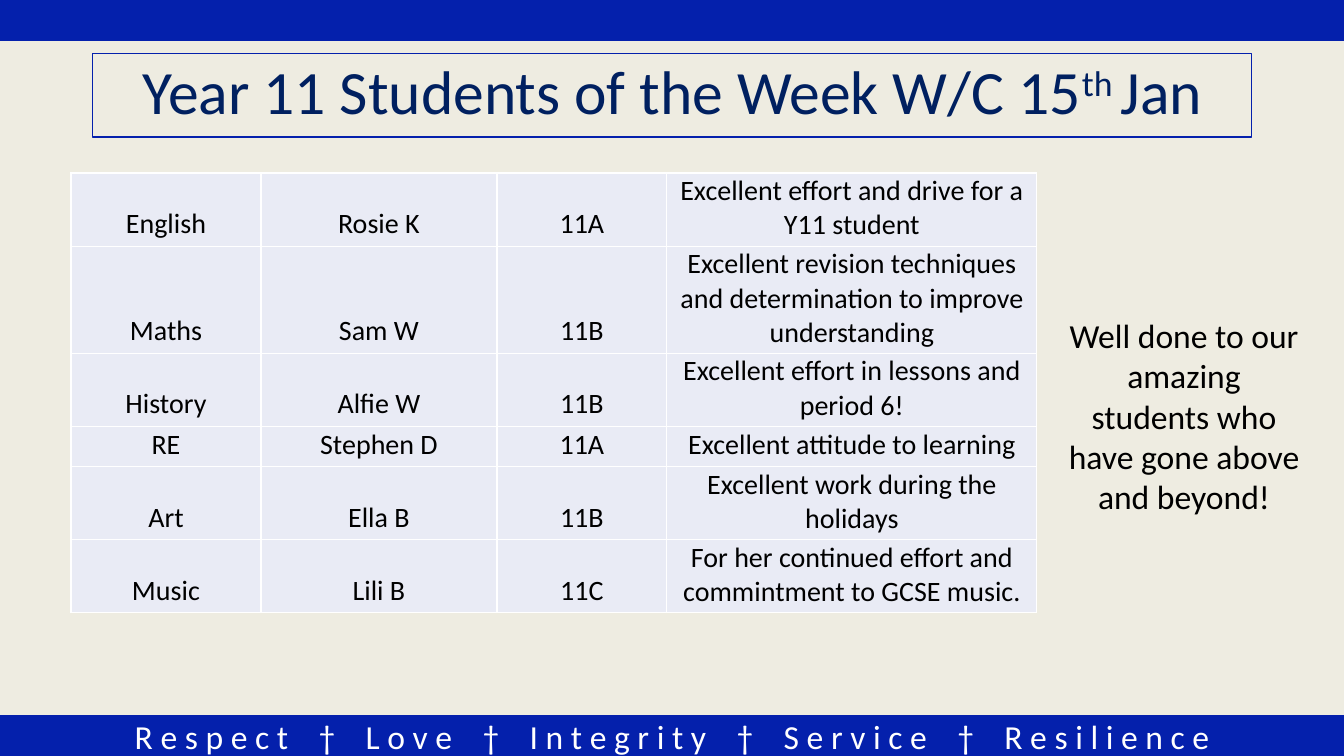
from pptx import Presentation
from pptx.dml.color import RGBColor
from pptx.enum.shapes import MSO_SHAPE as Shape
from pptx.enum.text import MSO_ANCHOR as Anchor, MSO_AUTO_SIZE as Fit, PP_ALIGN as Align
from pptx.oxml import parse_xml
from pptx.oxml.ns import nsdecls
from pptx.util import Emu, Pt

VALUES = ["Respect", "Love", "Integrity", "Service", "Resilience"]
TITLE = [("Year 11 Students of the Week W/C 15", 0), ("th ", 30000), ("Jan", 0)]
PRAISE = "Well done to our amazing students who have gone above and beyond!"
STUDENTS = [
    ("English", "Rosie K", "11A", "Excellent effort and drive for a Y11 student"),
    ("Maths", "Sam W", "11B",
     "Excellent revision techniques and determination to improve understanding"),
    ("History", "Alfie W", "11B", "Excellent effort in lessons and period 6!"),
    ("RE", "Stephen D", "11A", "Excellent attitude to learning"),
    ("Art", "Ella B", "11B", "Excellent work during the holidays"),
    ("Music", "Lili B", "11C", "For her continued effort and commintment to GCSE music."),
]
COLS = [190, 236, 170, 370]
ROWS = [73, 107, 73, 40, 73, 73]
WIDE, HIGH, BAND = 1344, 756, 40
COLOURS = {"paper": "EEECE1", "band": "0420AC", "title": "002060",
           "text": "000000", "white": "FFFFFF", "cell": "E9EBF5"}
FONT = "Calibri"
GAP = 1627  # three spaces at 24 pt, in hundredths of a point


def px(n):
    return Emu(round(n * 12192000 / WIDE))


def box(*sides):
    return [px(n) for n in sides]


def hue(name):
    return RGBColor.from_string(COLOURS[name])


def write(para, text, size, colour):
    para.alignment = Align.CENTER
    run = para.add_run()
    run.text = text
    run.font.name, run.font.size = FONT, Pt(size)
    run.font.color.rgb = hue(colour)
    return run


def add_band(slide, top):
    band = slide.shapes.add_shape(Shape.RECTANGLE, *box(0, top, WIDE, BAND))
    band.shadow.inherit = False
    band.fill.solid()
    band.fill.fore_color.rgb = band.line.color.rgb = hue("band")
    band.line.width = Pt(1)
    return band


def add_edges(cell):
    props = cell._tc.get_or_add_tcPr()
    for side in "LRTB":
        props.append(parse_xml(
            f'<a:ln{side} {nsdecls("a")} w="12700"><a:solidFill>'
            f'<a:srgbClr val="{COLOURS["white"]}"/></a:solidFill></a:ln{side}>'))


def add_values(slide):
    frame = add_band(slide, HIGH - BAND).text_frame
    frame.vertical_anchor = Anchor.MIDDLE
    para = frame.paragraphs[0]
    for i, value in enumerate(VALUES):
        if i:
            for text, gap in ((" ", GAP), ("†", 0), (" ", GAP)):
                run = write(para, text, 24, "white")
                run.font._element.set("spc", str(gap))
        write(para, " ".join(value), 24, "white")


def add_title(slide):
    title = slide.shapes.title
    title.left, title.top, title.width, title.height = box(93, 53, 1159, 84)
    title.line.color.rgb = hue("band")
    title.line.width = Pt(0.75)
    frame = title.text_frame
    frame.auto_size = Fit.NONE
    frame.vertical_anchor = Anchor.MIDDLE
    para = frame.paragraphs[0]
    para.line_spacing = 0.9
    for text, lift in TITLE:
        run = write(para, text, 44, "title")
        if lift:
            run.font._element.set("baseline", str(lift))


def add_praise(slide):
    frame = slide.shapes.add_textbox(*box(1056, 310, 256, 214)).text_frame
    frame.word_wrap = True
    frame.auto_size = Fit.SHAPE_TO_FIT_TEXT
    write(frame.paragraphs[0], PRAISE, 24, "text")


def add_students(slide):
    table = slide.shapes.add_table(
        len(ROWS), len(COLS), *box(71, 173, sum(COLS), sum(ROWS))).table
    table.first_row = table.horz_banding = False
    for col, width in zip(table.columns, COLS):
        col.width = px(width)
    for row, height, texts in zip(table.rows, ROWS, STUDENTS):
        row.height = px(height)
        for cell, text in zip(row.cells, texts):
            cell.margin_left = cell.margin_right = cell.margin_top = px(1)
            cell.margin_bottom = px(5)
            cell.vertical_anchor = Anchor.BOTTOM
            add_edges(cell)
            cell.fill.solid()
            cell.fill.fore_color.rgb = hue("cell")
            write(cell.text_frame.paragraphs[0], text, 20, "text")
    table.cell(len(ROWS) - 1, len(COLS) - 1).vertical_anchor = Anchor.MIDDLE


def main():
    deck = Presentation()
    deck.slide_width, deck.slide_height = box(WIDE, HIGH)
    slide = deck.slides.add_slide(deck.slide_layouts[5])
    slide.background.fill.solid()
    slide.background.fill.fore_color.rgb = hue("paper")
    add_values(slide)
    add_band(slide, 0)
    add_title(slide)
    add_praise(slide)
    add_students(slide)
    deck.save("out.pptx")


if __name__ == "__main__":
    main()
